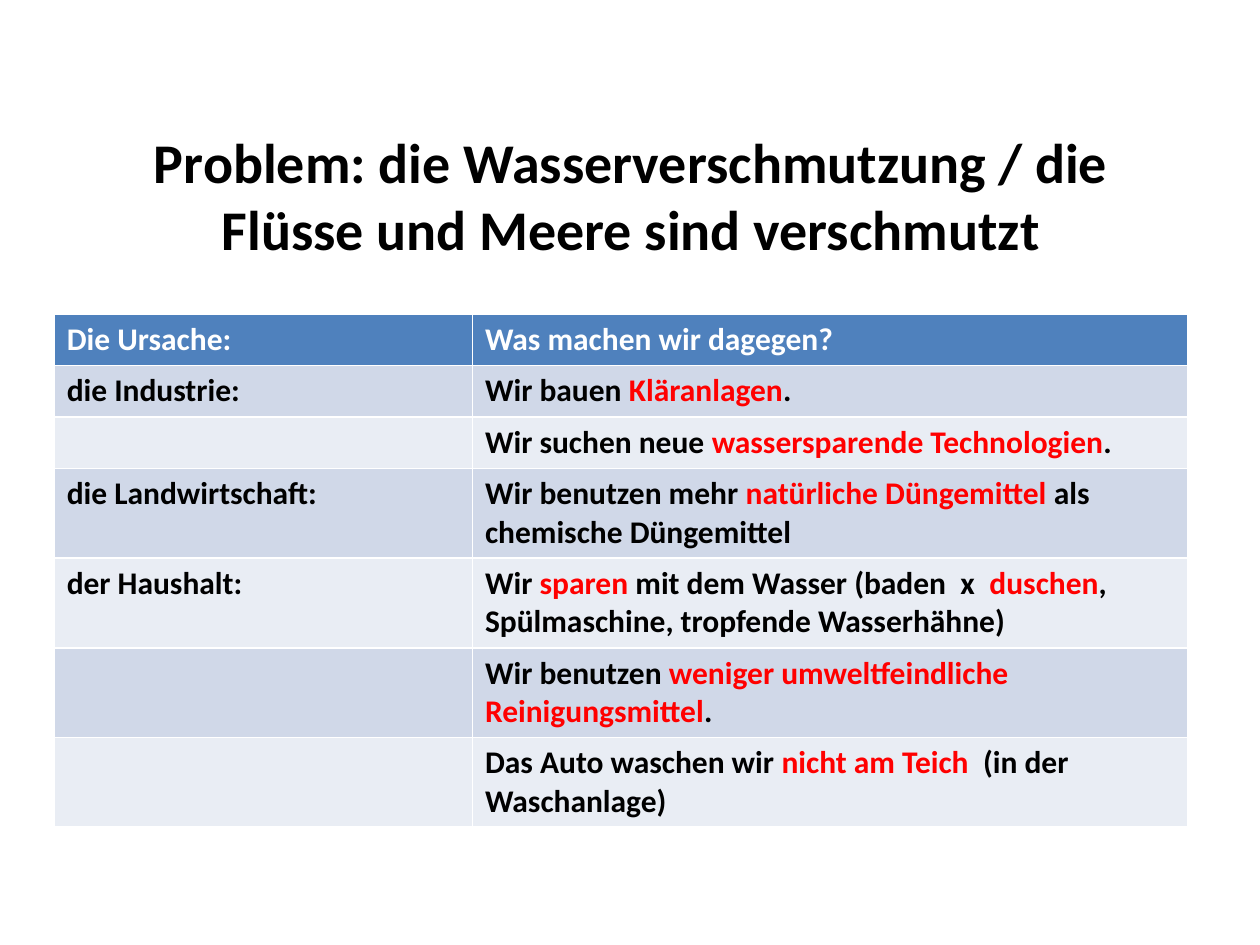
from dataclasses import dataclass

from pptx import Presentation
from pptx.dml.color import RGBColor
from pptx.enum import text
from pptx.util import Inches, Pt


@dataclass(frozen=True)
class Theme:
    font: str = "Calibri"
    title_size: int = 32
    table_size: int = 18
    ink: str = "000000"
    accent: str = "FF0000"
    header_ink: str = "FFFFFF"
    header_fill: str = "4F81BD"
    bands: tuple = ("D0D8E8", "E9EDF4")


THEME = Theme()
TITLE = "Problem: die Wasserverschmutzung / die Flüsse und Meere sind verschmutzt"
COLUMN_WIDTHS = (3.32, 5.68)
ROW_HEIGHT = 0.41

# Asterisks enclose the highlighted words
ROWS = [
    ("Die Ursache:", "Was machen wir dagegen?"),
    ("die Industrie:", "Wir bauen *Kläranlagen*."),
    ("", "Wir suchen neue *wassersparende Technologien*."),
    ("die Landwirtschaft:",
     "Wir benutzen mehr *natürliche Düngemittel* als chemische Düngemittel"),
    ("der Haushalt:",
     "Wir *sparen* mit dem Wasser (baden  x  *duschen*, "
     "Spülmaschine, tropfende Wasserhähne)"),
    ("", "Wir benutzen *weniger umweltfeindliche Reinigungsmittel*."),
    ("", "Das Auto waschen wir *nicht am Teich  *(in der Waschanlage)"),
]


def style_paragraph(p, size):
    p.font.name = THEME.font
    p.font.size = Pt(size)
    p.font.bold = True


def add_title(s):
    sp = s.shapes.title
    sp.left, sp.top, sp.width, sp.height = map(Inches, (0.51, 0.92, 9, 1.25))
    tf = sp.text_frame
    tf.text = TITLE
    tf.vertical_anchor = text.MSO_ANCHOR.MIDDLE
    p = tf.paragraphs[0]
    p.alignment = text.PP_ALIGN.CENTER
    style_paragraph(p, THEME.title_size)
    p.font.color.rgb = RGBColor.from_string(THEME.ink)


def fill_cell(cell, content, ink, fill):
    cell.fill.solid()
    cell.fill.fore_color.rgb = RGBColor.from_string(fill)
    p = cell.text_frame.paragraphs[0]
    style_paragraph(p, THEME.table_size)
    for i, part in enumerate(content.split("*")):
        if part:
            r = p.add_run()
            r.text = part
            color = THEME.accent if i % 2 else ink
            r.font.color.rgb = RGBColor.from_string(color)


def add_measures_table(s):
    frame = s.shapes.add_table(
        len(ROWS), len(COLUMN_WIDTHS), Inches(0.43), Inches(2.49),
        Inches(sum(COLUMN_WIDTHS)), Inches(ROW_HEIGHT * len(ROWS)))
    table = frame.table
    for column, width in zip(table.columns, COLUMN_WIDTHS):
        column.width = Inches(width)

    # Header row first, then alternating bands
    for i, contents in enumerate(ROWS):
        table.rows[i].height = Inches(ROW_HEIGHT)
        ink = THEME.ink if i else THEME.header_ink
        fill = THEME.bands[(i - 1) % 2] if i else THEME.header_fill
        for j, content in enumerate(contents):
            fill_cell(table.cell(i, j), content, ink, fill)


def main():
    prs = Presentation()
    prs.slide_width, prs.slide_height = Inches(10), Inches(7.5)
    s = prs.slides.add_slide(prs.slide_layouts[5])
    add_title(s)
    add_measures_table(s)
    prs.save("out.pptx")


if __name__ == "__main__":
    main()
